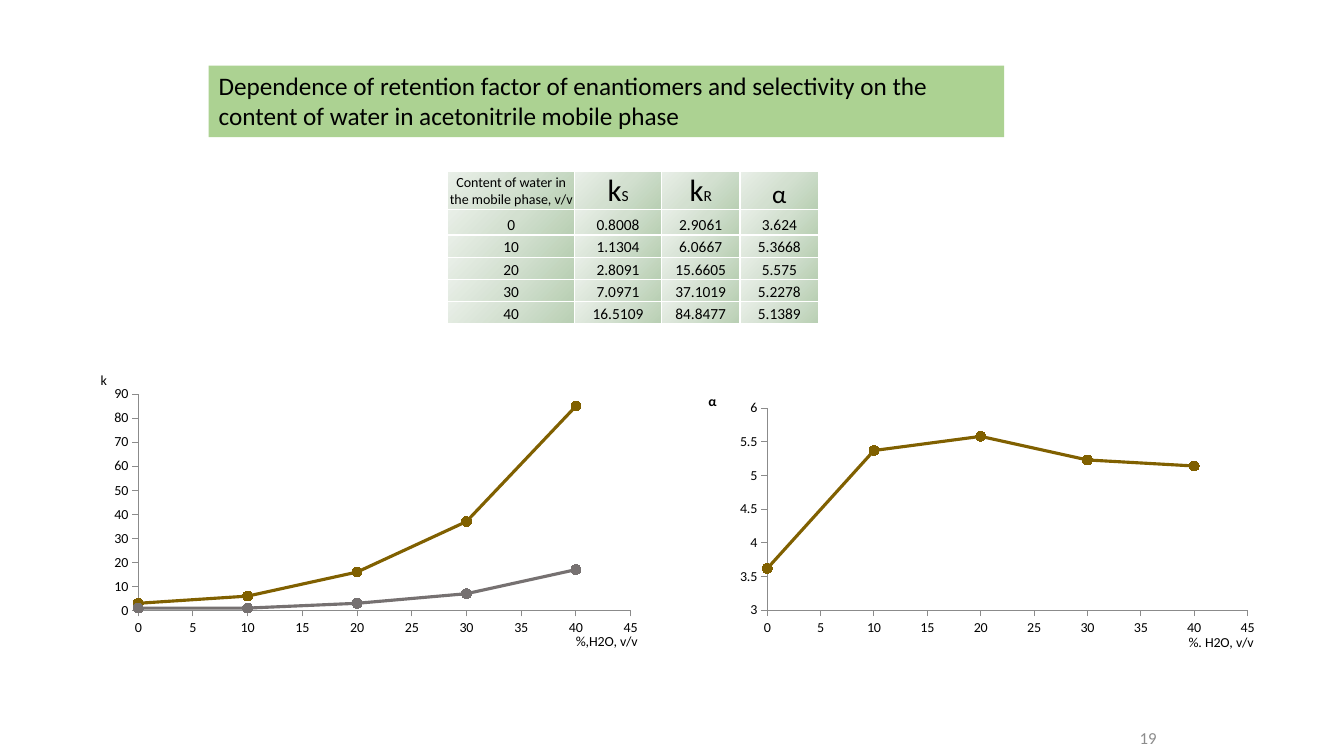
from lxml import etree
from pptx import Presentation
from pptx import util as u
from pptx.chart.data import XyChartData
from pptx.dml.color import RGBColor
from pptx.enum import chart as ch, shapes, text
from pptx.oxml import parse_xml
from pptx.oxml.ns import nsdecls, qn

FONT = "Calibri"
BLACK, GOLD, GREY = "000000", "806000", "767171"
AXIS_GREY = "8B8B8B"

WATER = [0, 10, 20, 30, 40]
K_S = [0.8008, 1.1304, 2.8091, 7.0971, 16.5109]
K_R = [2.9061, 6.0667, 15.6605, 37.1019, 84.8477]
ALPHA = [3.624, 5.3668, 5.575, 5.2278, 5.1389]


def rgb(value):
    return RGBColor.from_string(value)


def box(*lengths):
    return [u.Inches(n) for n in lengths]


def set_attrs(obj, values):
    for name, value in values.items():
        setattr(obj, name, value)


def style_font(font, size, color=BLACK, bold=False):
    set_attrs(font, {"name": FONT, "size": u.Pt(size), "bold": bold})
    font.color.rgb = rgb(color)


def write(p, runs, align, color=BLACK):
    p.alignment = align
    for words, size in runs:
        r = p.add_run()
        r.text = words
        style_font(r.font, size, color)


# Title bar and page number
def add_title(s, at, words):
    sp = s.shapes.add_shape(shapes.MSO_SHAPE.RECTANGLE, *box(*at))
    sp.shadow.inherit = False
    sp.fill.solid()
    sp.fill.fore_color.rgb = rgb("A9D18E")
    color = sp.fill._xPr.find(".//" + qn("a:srgbClr"))
    etree.SubElement(color, qn("a:alpha"), val="96000")
    sp.line.fill.background()
    tf = sp.text_frame
    set_attrs(tf, {"word_wrap": True, "vertical_anchor": text.MSO_ANCHOR.TOP})
    write(tf.paragraphs[0], [(words, 18)], text.PP_ALIGN.LEFT)


def add_page_number(s, at, words):
    tf = s.shapes.add_textbox(*box(*at)).text_frame
    set_attrs(tf, {"word_wrap": True, "vertical_anchor": text.MSO_ANCHOR.MIDDLE})
    write(tf.paragraphs[0], [(words, 12)], text.PP_ALIGN.RIGHT, "8C8C8C")


# Table
def paint_cell(cell):
    tc_pr = cell._tc.get_or_add_tcPr()
    for side in "LRTB":
        tc_pr.append(parse_xml(
            f'<a:ln{side} {nsdecls("a")} w="12700"><a:solidFill>'
            f'<a:srgbClr val="FFFFFF"/></a:solidFill></a:ln{side}>'))
    stops = "".join(
        f'<a:gs pos="{pos}"><a:srgbClr val="{color}"/></a:gs>'
        for pos, color in [(0, "B8CFB3"), (50000, "D3E0D0"), (100000, "E9EFE8")])
    tc_pr.append(parse_xml(
        f'<a:gradFill {nsdecls("a")}><a:gsLst>{stops}</a:gsLst>'
        '<a:path path="circle"><a:fillToRect l="100000" t="100000"/></a:path>'
        '</a:gradFill>'))


def add_retention_table(s, at, widths, heights, rows):
    frame = s.shapes.add_table(len(rows), len(widths), *box(*at))
    table = frame.table
    set_attrs(table, {"first_row": False, "horz_banding": False})
    for column, width in zip(table.columns, widths):
        column.width = u.Inches(width)
    for row, height, contents in zip(table.rows, heights, rows):
        row.height = u.Inches(height)
        for cell, runs in zip(row.cells, contents):
            margin = u.Inches(0.01)
            set_attrs(cell, {"margin_left": margin, "margin_right": margin,
                             "margin_top": margin, "margin_bottom": 0,
                             "vertical_anchor": text.MSO_ANCHOR.BOTTOM})
            write(cell.text_frame.paragraphs[0], runs, text.PP_ALIGN.CENTER)
            paint_cell(cell)
    table.cell(0, 0).vertical_anchor = text.MSO_ANCHOR.MIDDLE


# Charts
def set_layout(parent, index, inner=False, **fractions):
    for old in parent.findall(qn("c:layout")):
        parent.remove(old)
    target = '<c:layoutTarget val="inner"/>' if inner else ""
    modes = '<c:xMode val="edge"/><c:yMode val="edge"/>'
    values = "".join(f'<c:{k} val="{v}"/>' for k, v in fractions.items())
    parent.insert(index, parse_xml(
        f'<c:layout {nsdecls("c")}><c:manualLayout>{target}{modes}{values}'
        '</c:manualLayout></c:layout>'))


def style_axis(axis, scale, title, place, bold=False):
    low, high, step = scale
    set_attrs(axis, {"minimum_scale": low, "maximum_scale": high,
                     "major_unit": step, "has_major_gridlines": False,
                     "major_tick_mark": ch.XL_TICK_MARK.OUTSIDE,
                     "minor_tick_mark": ch.XL_TICK_MARK.NONE})
    axis.format.line.color.rgb = rgb(AXIS_GREY)
    axis.format.line.width = u.Pt(0.75)
    set_attrs(axis.tick_labels, {"number_format": "General",
                                 "number_format_is_linked": False})
    tf = axis.axis_title.text_frame
    tf.text = title
    style_font(tf.paragraphs[0].runs[0].font, 10, bold=bold)
    body = tf._txBody.bodyPr
    body.set("rot", "0")
    body.set("vert", "horz")
    set_layout(axis.axis_title._element, 1, x=place[0], y=place[1])


def add_scatter(s, at, plot, digits, series, x_axis, y_axis):
    data = XyChartData(number_format="General")
    for number, (values, _) in enumerate(series, 1):
        points = data.add_series(f"Series {number}")
        for x, y in zip(WATER, values):
            points.add_data_point(x, round(y, digits))
    chart = s.shapes.add_chart(
        ch.XL_CHART_TYPE.XY_SCATTER_LINES, *box(*at), data).chart
    set_attrs(chart, {"has_legend": False, "has_title": False})
    style_font(chart.font, 10)
    chart.plots[0].vary_by_categories = False
    for line, (_, color) in zip(chart.plots[0].series, series):
        line.smooth = False
        line.format.line.color.rgb = rgb(color)
        line.format.line.width = u.Pt(2.25)
        set_attrs(line.marker, {"style": ch.XL_MARKER_STYLE.CIRCLE, "size": 7})
        line.marker.format.fill.solid()
        line.marker.format.fill.fore_color.rgb = rgb(color)
        line.marker.format.line.color.rgb = rgb(color)
    style_axis(chart.category_axis, (0, 45, 5), *x_axis)
    style_axis(chart.value_axis, *y_axis)
    set_layout(chart._chartSpace.chart.plotArea, 0, inner=True,
               **dict(zip("xywh", plot)))


def main():
    prs = Presentation()
    prs.slide_width, prs.slide_height = box(13.33, 7.5)
    s = prs.slides.add_slide(prs.slide_layouts[6])

    # Retention factors and selectivity
    header = [[("Content of water in the mobile phase, v/v", 10)],
              [("k", 22), ("S", 11)], [("k", 22), ("R", 11)], [("α", 18)]]
    body = [[[(str(value), 11)] for value in row]
            for row in zip(WATER, K_S, K_R, ALPHA)]
    add_retention_table(s, (4.44, 1.7, 3.68, 1.5), [1.26, 0.86, 0.78, 0.78],
                        [0.35, 0.25] + [0.22] * 4, [header] + body)

    # Selectivity chart, then retention chart
    add_scatter(s, (7, 3.84, 5.54, 2.66), (0.11, 0.08, 0.86, 0.77), 2,
                [(ALPHA, GOLD)], ("%. H2O, v/v", (0.86, 0.93)),
                ((3, 6, 0.5), "α", (0, 0.01), True))
    add_scatter(s, (0.86, 3.66, 5.68, 2.83), (0.09, 0.09, 0.86, 0.77), 0,
                [(K_S, GREY), (K_R, GOLD)], ("%,H2O, v/v", (0.85, 0.93)),
                ((0, 90, 10), "k", (0.02, 0)))

    add_title(s, (2.07, 0.65, 7.89, 0.71),
              "Dependence of retention factor of enantiomers and selectivity "
              "on the content of water in acetonitrile mobile phase")
    add_page_number(s, (11.1, 7.14, 0.47, 0.36), "19")
    prs.save("out.pptx")


if __name__ == "__main__":
    main()
